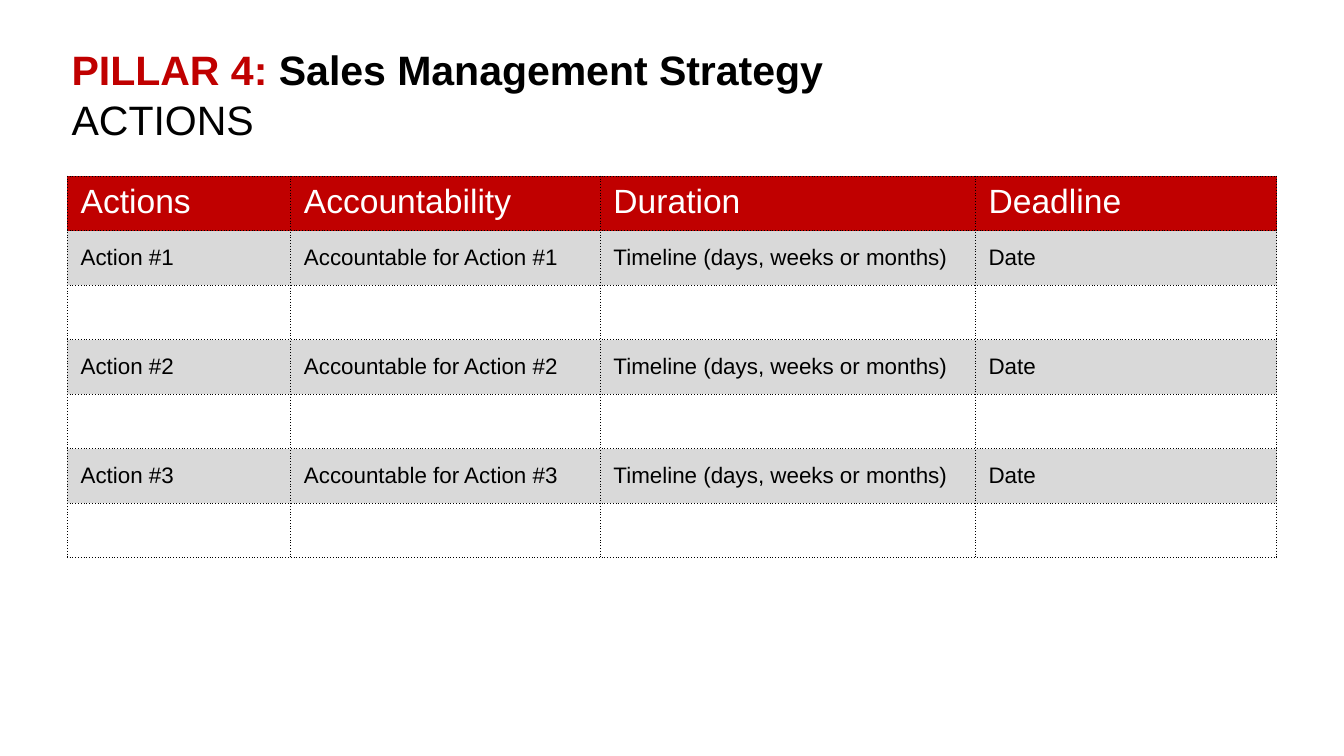
from lxml.etree import fromstring
from pptx import Presentation
from pptx.dml.color import RGBColor
from pptx.enum.text import MSO_ANCHOR, MSO_AUTO_SIZE, PP_ALIGN
from pptx.oxml.ns import nsdecls
from pptx.util import Cm, Pt

COLORS = {"red": "C00000", "black": "000000", "white": "FFFFFF", "gray": "D9D9D9"}
HEADS = ["Actions", "Accountability", "Duration", "Deadline"]
ACTIONS = [
    [f"Action #{n}", f"Accountable for Action #{n}",
     "Timeline (days, weeks or months)", "Date"]
    for n in (1, 2, 3)
]
WIDTHS = [4.22, 5.85, 7.09, 5.7]
HEIGHT = 1.03


def color(name):
    return RGBColor.from_string(COLORS[name])


def write(para, text, size=12, ink="black", bold=False):
    run = para.add_run()
    run.text = text
    font = run.font
    font.name, font.size, font.bold = "Arial", Pt(size), bold
    font.color.rgb = color(ink)


def border(cell):
    """Put a dotted line on all four sides, ahead of the cell's fill."""
    props = cell._tc.get_or_add_tcPr()
    for spot, side in enumerate("LRTB"):
        props.insert(spot, fromstring(
            f'<a:ln{side} {nsdecls("a")} w="6350"><a:solidFill>'
            f'<a:srgbClr val="{COLORS["black"]}"/></a:solidFill>'
            f'<a:prstDash val="sysDot"/></a:ln{side}>'))


def add_title(slide):
    title = slide.shapes.title
    title.left, title.top = Cm(1.1), Cm(0.58)
    title.width, title.height = Cm(22.86), Cm(2.4)
    frame = title.text_frame
    frame.word_wrap = True
    frame.auto_size = MSO_AUTO_SIZE.NONE
    frame.vertical_anchor = MSO_ANCHOR.MIDDLE
    para = frame.paragraphs[0]
    para.alignment = PP_ALIGN.LEFT
    write(para, "PILLAR 4: ", size=22, ink="red", bold=True)
    write(para, "Sales Management Strategy", size=22, bold=True)
    para.add_line_break()
    write(para, "ACTIONS", size=22)


def add_plan(slide):
    rows = [HEADS]
    for action in ACTIONS:
        rows += [action, [""] * len(HEADS)]
    table = slide.shapes.add_table(
        len(rows), len(HEADS), Cm(1.27), Cm(3.33),
        Cm(sum(WIDTHS)), Cm(HEIGHT * len(rows))).table
    for col, width in zip(table.columns, WIDTHS):
        col.width = Cm(width)
    for r, row in enumerate(rows):
        table.rows[r].height = Cm(HEIGHT)
        for c, text in enumerate(row):
            cell = table.cell(r, c)
            para = cell.text_frame.paragraphs[0]
            if text:
                cell.fill.solid()
                cell.fill.fore_color.rgb = color("gray" if r else "red")
            else:
                cell.fill.background()
                para.font.size = Pt(12)
            if r == 0:
                write(para, text, size=18, ink="white")
            elif text:
                cell.vertical_anchor = MSO_ANCHOR.MIDDLE
                write(para, text)
            border(cell)


def main():
    deck = Presentation()
    deck.slide_width, deck.slide_height = Cm(25.4), Cm(14.29)
    slide = deck.slides.add_slide(deck.slide_layouts[5])
    add_title(slide)
    add_plan(slide)
    deck.save("out.pptx")


if __name__ == "__main__":
    main()
